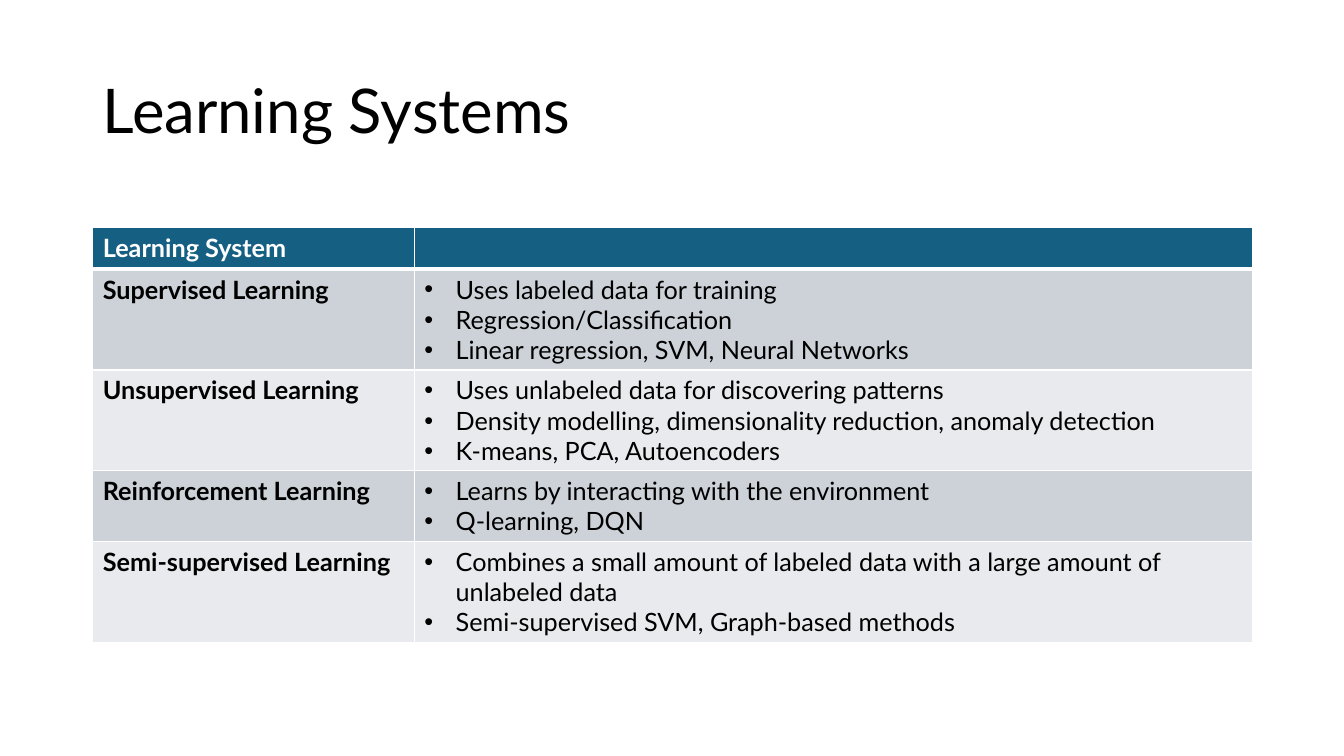
from dataclasses import dataclass

from lxml.etree import SubElement
from pptx import Presentation
from pptx.dml.color import RGBColor as Color
from pptx.enum.text import MSO_ANCHOR as Anchor
from pptx.oxml import parse_xml
from pptx.oxml.ns import nsdecls, qn
from pptx.util import Inches, Pt


@dataclass(frozen=True)
class Theme:
    font: str = "Lato"
    title_size: int = 44
    body_size: int = 18
    ink: str = "000000"
    paper: str = "FFFFFF"
    header: str = "156082"
    bands: tuple = ("CCD2D8", "E8EAED")
    thin: int = 1
    thick: int = 3


THEME = Theme()

SYSTEMS = [
    ("Supervised Learning", 1.0, [
        "Uses labeled data for training",
        "Regression/Classification",
        "Linear regression, SVM, Neural Networks",
    ]),
    ("Unsupervised Learning", 1.0, [
        "Uses unlabeled data for discovering patterns",
        "Density modelling, dimensionality reduction, anomaly detection",
        "K-means, PCA, Autoencoders",
    ]),
    ("Reinforcement Learning", 0.7, [
        "Learns by interacting with the environment",
        "Q-learning, DQN",
    ]),
    ("Semi-supervised Learning", 1.0, [
        "Combines a small amount of labeled data with a large amount of unlabeled data",
        "Semi-supervised SVM, Graph-based methods",
    ]),
]


def write(para, text, size=THEME.body_size, color=THEME.ink, bold=False,
          bullet=False, spacing=None):
    span = para.add_run()
    span.text = text
    span.font.name = THEME.font
    span.font.size = Pt(size)
    span.font.bold = bold
    span.font.color.rgb = Color.from_string(color)
    if spacing:
        para.line_spacing = spacing
    if bullet:
        props = para._p.get_or_add_pPr()
        props.set("marL", str(Inches(0.31)))
        props.set("indent", str(-Inches(0.31)))
        SubElement(props, qn("a:buFont")).set("typeface", "Arial")
        SubElement(props, qn("a:buChar")).set("char", "•")


def paint(cell, fill, top=THEME.thin, bottom=THEME.thin):
    cell.fill.solid()
    cell.fill.fore_color.rgb = Color.from_string(fill)
    edges = {"lnL": THEME.thin, "lnR": THEME.thin, "lnT": top, "lnB": bottom}
    for index, (tag, width) in enumerate(edges.items()):
        line = parse_xml(
            f'<a:{tag} {nsdecls("a")} w="{Pt(width)}"><a:solidFill>'
            f'<a:srgbClr val="{THEME.paper}"/></a:solidFill></a:{tag}>')
        cell._tc.get_or_add_tcPr().insert(index, line)


def add_title(page, left, top, width, height):
    box = page.shapes.add_textbox(
        Inches(left), Inches(top), Inches(width), Inches(height))
    frame = box.text_frame
    frame.word_wrap = True
    frame.vertical_anchor = Anchor.MIDDLE
    write(frame.paragraphs[0], "Learning Systems", size=THEME.title_size, spacing=0.9)


def add_systems_table(page, left, top, width, height):
    table = page.shapes.add_table(
        len(SYSTEMS) + 1, 2,
        Inches(left), Inches(top), Inches(width), Inches(height)).table
    name_width = 3.19
    table.columns[0].width = Inches(name_width)
    table.columns[1].width = Inches(width - name_width)
    table.rows[0].height = Inches(height - sum(row[1] for row in SYSTEMS))

    for cell in table.rows[0].cells:
        paint(cell, THEME.header, bottom=THEME.thick)
    write(table.cell(0, 0).text_frame.paragraphs[0], "Learning System",
          color=THEME.paper, bold=True)

    for number, (name, row_height, facts) in enumerate(SYSTEMS, start=1):
        row = table.rows[number]
        row.height = Inches(row_height)
        name_cell, facts_cell = row.cells
        for cell in (name_cell, facts_cell):
            paint(cell, THEME.bands[(number - 1) % 2],
                  top=THEME.thick if number == 1 else THEME.thin)
        write(name_cell.text_frame.paragraphs[0], name, bold=True)
        frame = facts_cell.text_frame
        for index, fact in enumerate(facts):
            para = frame.add_paragraph() if index else frame.paragraphs[0]
            write(para, fact, bullet=True)


def main():
    deck = Presentation()
    deck.slide_width = Inches(13.33)
    deck.slide_height = Inches(7.5)
    page = deck.slides.add_slide(deck.slide_layouts[6])
    add_title(page, 0.92, 0.4, 11.5, 1.45)
    add_systems_table(page, 0.92, 2.26, 11.5, 4.11)
    deck.save("out.pptx")


if __name__ == "__main__":
    main()
